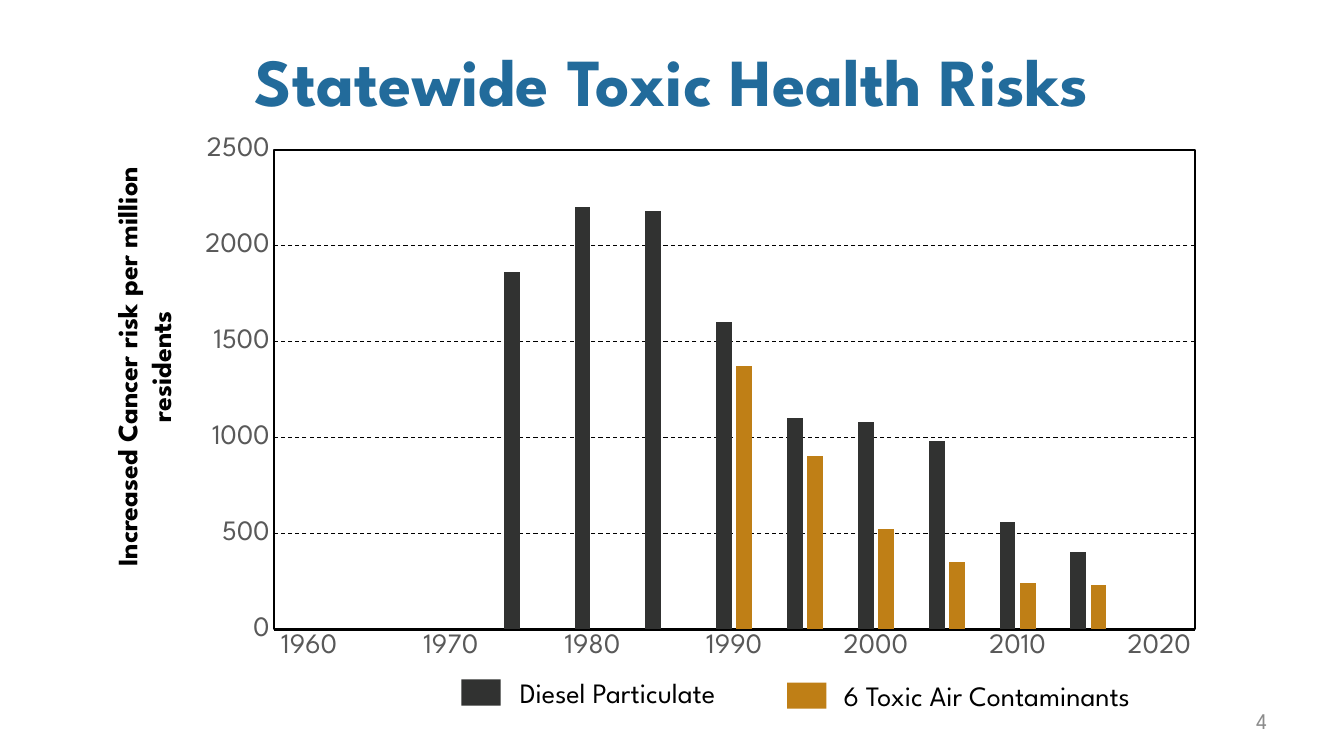
"""Build the Statewide Toxic Health Risks slide with its column chart."""
from dataclasses import dataclass

from lxml import etree
from pptx import Presentation
from pptx.chart.data import CategoryChartData
from pptx.dml.color import RGBColor
from pptx.enum.chart import XL_CHART_TYPE as ChartType, XL_TICK_MARK as Tick
from pptx.enum.dml import MSO_LINE
from pptx.enum.shapes import MSO_SHAPE
from pptx.enum.text import MSO_ANCHOR as Anchor, MSO_AUTO_SIZE as AutoSize, PP_ALIGN as Align
from pptx.oxml import parse_xml
from pptx.oxml.ns import nsdecls, qn
from pptx.util import Cm, Pt

FONT = "League Spartan"
COLORS = {
    "title": "226B9B",
    "text": "000000",
    "axis": "595959",
    "number": "8C8C8C",
    "diesel": "313231",
    "toxics": "BF7F16",
}


@dataclass
class Series:
    name: str
    color: str
    values: list
    swatch: tuple
    label: tuple


CATEGORIES = [str(year) if year % 10 == 0 else "" for year in range(1960, 2021, 5)]
SERIES = [
    Series("Diesel Particulate", "diesel",
           [None] * 3 + [1860, 2200, 2180, 1600, 1100, 1080, 980, 560, 400, None],
           (11.63, 17.12), (12.85, 16.89, 5.92, 1.11)),
    Series("6 Toxic Air Contaminants", "toxics",
           [None] * 6 + [1370, 900, 520, 350, 240, 230, None],
           (19.84, 17.2), (21.01, 16.97, 7.77, 1.11)),
]


def rgb(name: str) -> RGBColor:
    return RGBColor.from_string(COLORS[name])


def style_font(font, size: float, color: str, bold: bool = False) -> None:
    font.name, font.size, font.bold = FONT, Pt(size), bold
    font.color.rgb = rgb(color)


def add_text(s, text: str, box: tuple, *, size: float = 20, color: str = "text",
             bold: bool = False, align=Align.LEFT, anchor=Anchor.TOP,
             rotation: float = 0, spacing: float = 1, grow: bool = False) -> None:
    sp = s.shapes.add_textbox(*map(Cm, box))
    sp.rotation = rotation
    tf = sp.text_frame
    tf.word_wrap, tf.vertical_anchor = True, anchor
    tf.auto_size = AutoSize.SHAPE_TO_FIT_TEXT if grow else AutoSize.NONE
    p = tf.paragraphs[0]
    p.alignment, p.line_spacing = align, spacing
    r = p.add_run()
    r.text = text
    style_font(r.font, size, color, bold)


def add_legend_entry(s, entry: Series) -> None:
    sp = s.shapes.add_shape(MSO_SHAPE.RECTANGLE, *map(Cm, (*entry.swatch, 0.99, 0.66)))
    sp.shadow.inherit = False
    sp.fill.solid()
    sp.fill.fore_color.rgb = rgb(entry.color)
    sp.line.fill.background()
    add_text(s, entry.name, entry.label, grow=True)


def frame_plot(chart, x: float, y: float, w: float, h: float) -> None:
    plot_area = chart.plots[0]._element.getparent()
    for old in plot_area.findall(qn("c:layout")):
        plot_area.remove(old)
    layout = parse_xml(f'<c:layout {nsdecls("c")}><c:manualLayout/></c:layout>')
    settings = {"layoutTarget": "inner", "xMode": "edge", "yMode": "edge",
                "x": x, "y": y, "w": w, "h": h}
    for tag, value in settings.items():
        etree.SubElement(layout[0], qn(f"c:{tag}")).set("val", str(value))
    plot_area.insert(0, layout)
    plot_area.append(parse_xml(
        f'<c:spPr {nsdecls("c", "a")}><a:noFill/><a:ln w="{Pt(1.5)}"><a:solidFill>'
        f'<a:srgbClr val="{COLORS["text"]}"/></a:solidFill></a:ln></c:spPr>'))


def add_risk_chart(s) -> None:
    data = CategoryChartData()
    data.categories = CATEGORIES
    for entry in SERIES:
        data.add_series(entry.name, entry.values)
    box = map(Cm, (4.67, 3.18, 25.96, 13.72))
    chart = s.shapes.add_chart(ChartType.COLUMN_CLUSTERED, *box, data).chart
    chart.has_legend = chart.has_title = False
    style_font(chart.font, 10, "text")

    plot = chart.plots[0]
    plot.gap_width, plot.overlap, plot.vary_by_categories = 219, -27, False
    for series, entry in zip(plot.series, SERIES):
        series.format.fill.solid()
        series.format.fill.fore_color.rgb = rgb(entry.color)

    years, risk = chart.category_axis, chart.value_axis
    for axis in (years, risk):
        axis.major_tick_mark = axis.minor_tick_mark = Tick.NONE
        style_font(axis.tick_labels.font, 20, "axis")
    years.has_major_gridlines = False
    years.format.line.color.rgb = rgb("text")
    years.format.line.width = Pt(2)
    risk.minimum_scale, risk.maximum_scale, risk.major_unit = 0, 2500, 500
    risk.format.line.fill.background()
    grid = risk.major_gridlines.format.line
    grid.color.rgb, grid.width, grid.dash_style = rgb("text"), Pt(0.75), MSO_LINE.DASH
    frame_plot(chart, 0.086, 0.043, 0.894, 0.881)


def main() -> None:
    prs = Presentation()
    prs.slide_width, prs.slide_height = Cm(33.87), Cm(19.05)
    s = prs.slides.add_slide(prs.slide_layouts[6])
    add_text(s, "Statewide Toxic Health Risks", (0, 0, 33.87, 3.18), size=48,
             color="title", bold=True, align=Align.CENTER, anchor=Anchor.BOTTOM, spacing=0.9)
    add_text(s, "4", (24.28, 17.65, 7.9, 1.02), size=16, color="number",
             align=Align.RIGHT, anchor=Anchor.MIDDLE)
    add_text(s, "Increased Cancer risk per million residents", (-3.58, 8.69, 13.54, 1.11),
             bold=True, align=Align.CENTER, rotation=270, grow=True)
    for entry in SERIES:
        add_legend_entry(s, entry)
    add_risk_chart(s)
    prs.save("out.pptx")


if __name__ == "__main__":
    main()
